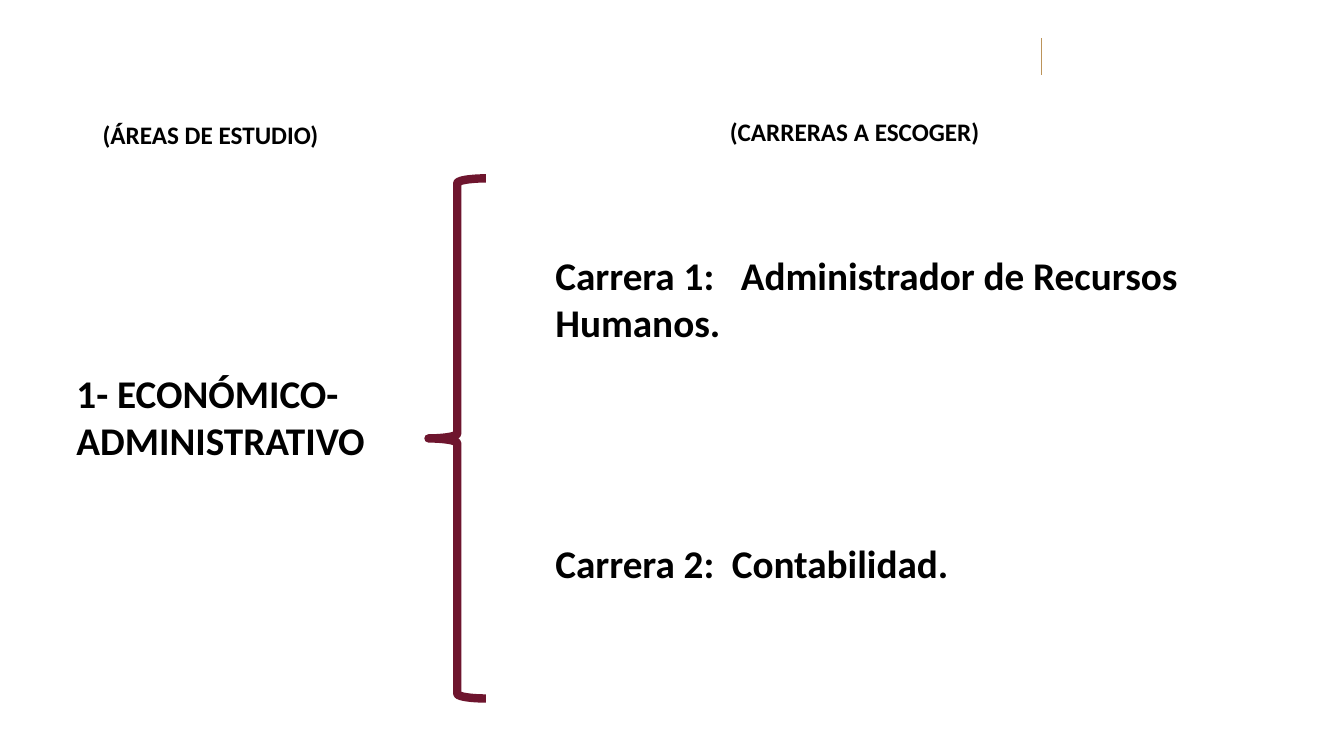
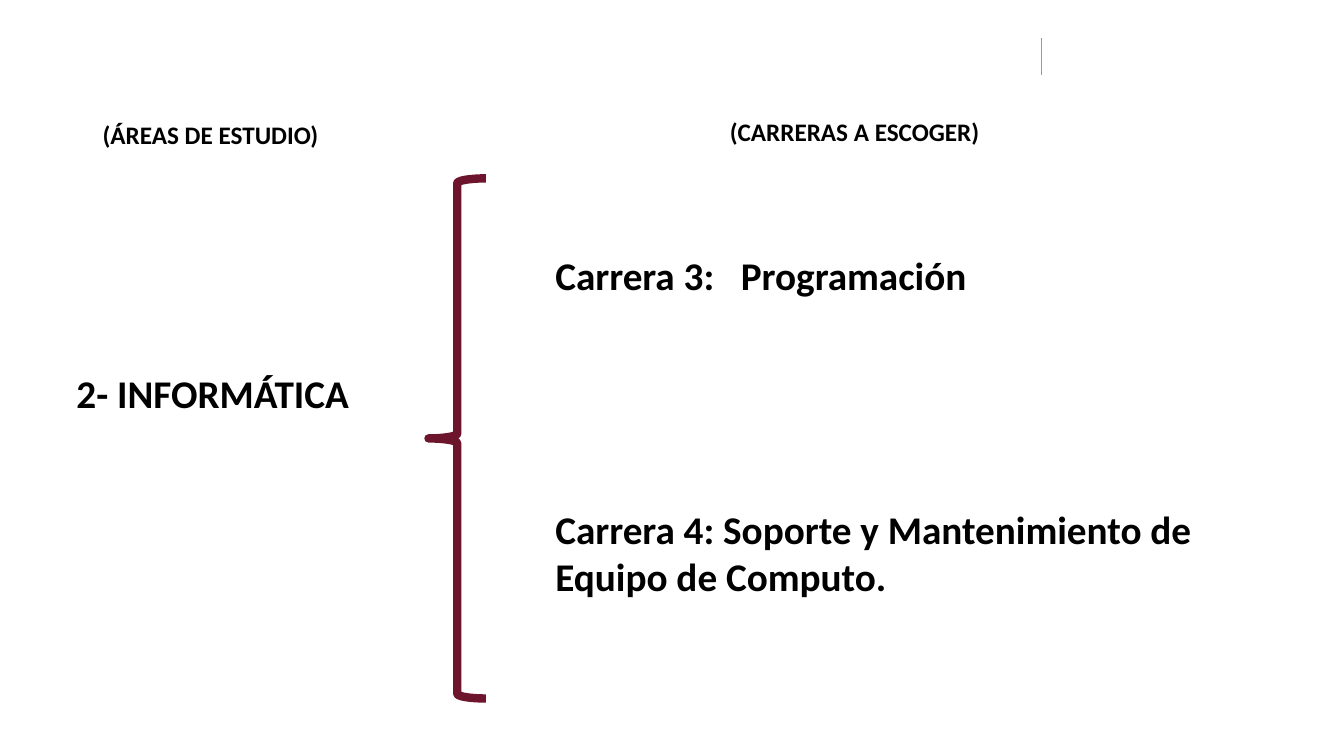
"""Build two slides that link each study area to its careers."""
from dataclasses import dataclass

from lxml.etree import SubElement
from pptx import Presentation
from pptx.dml.color import RGBColor
from pptx.enum.shapes import MSO_CONNECTOR, MSO_SHAPE
from pptx.enum.text import MSO_AUTO_SIZE
from pptx.oxml.ns import qn
from pptx.util import Inches, Pt


@dataclass(frozen=True)
class Theme:
    ink: RGBColor = RGBColor(0x00, 0x00, 0x00)
    wine: RGBColor = RGBColor(0x6E, 0x15, 0x2E)
    gold: RGBColor = RGBColor(0xBC, 0x94, 0x5A)
    font: str = "Calibri"
    heading: Pt = Pt(18)
    body: Pt = Pt(28)
    rule: Pt = Pt(0.5)
    brace: Pt = Pt(6)


theme = Theme()


def add_label(slide, text, box, size, tab=None):
    frame = slide.shapes.add_textbox(*map(Inches, box)).text_frame
    frame.word_wrap = True
    frame.auto_size = MSO_AUTO_SIZE.SHAPE_TO_FIT_TEXT
    paragraph = frame.paragraphs[0]
    if tab:
        stops = SubElement(paragraph._p.get_or_add_pPr(), qn("a:tabLst"))
        SubElement(stops, qn("a:tab"), pos=str(Inches(tab)), algn="l")
    run = paragraph.add_run()
    run.text = text
    run.font.name = theme.font
    run.font.size = size
    run.font.bold = True
    run.font.color.rgb = theme.ink


headings = [
    ("(ÁREAS DE ESTUDIO)", (0.92, 1.13, 6.66, 0.4)),
    ("(CARRERAS A ESCOGER)", (7.14, 1.1, 6.66, 0.4)),
]

study_areas = [
    ("1- ECONÓMICO-ADMINISTRATIVO", 1.04, [
        ("Carrera 1:\tAdministrador de Recursos Humanos.", (5.41, 2.44, 7.44, 1.04), 1.84),
        ("Carrera 2:\tContabilidad.", (5.41, 5.3, 4.81, 0.57), 1.75),
    ]),
    ("2- INFORMÁTICA", 0.57, [
        ("Carrera 3:\tProgramación", (5.41, 2.44, 7.44, 0.57), 1.84),
        ("Carrera 4: Soporte y Mantenimiento de Equipo de Computo.", (5.41, 4.96, 7.29, 1.04), None),
    ]),
]

deck = Presentation()
deck.slide_width = Inches(13.33)
deck.slide_height = Inches(7.5)

for area, area_height, careers in study_areas:
    slide = deck.slides.add_slide(deck.slide_layouts[6])

    divider = slide.shapes.add_connector(
        MSO_CONNECTOR.STRAIGHT, Inches(10.33), Inches(0.38), Inches(10.33), Inches(0.74))
    divider.line.color.rgb = theme.gold
    divider.line.width = theme.rule
    SubElement(divider._element.spPr, qn("a:effectLst"))

    brace = slide.shapes.add_shape(
        MSO_SHAPE.LEFT_BRACE, Inches(4.25), Inches(1.77), Inches(0.57), Inches(5.16))
    brace.shadow.inherit = False
    brace.fill.background()
    brace.line.color.rgb = theme.wine
    brace.line.width = theme.brace

    add_label(slide, area, (0.66, 3.61, 3.59, area_height), theme.body)
    for career, box, tab in careers:
        add_label(slide, career, box, theme.body, tab)
    for heading, box in headings:
        add_label(slide, heading, box, theme.heading)

deck.save("out.pptx")
